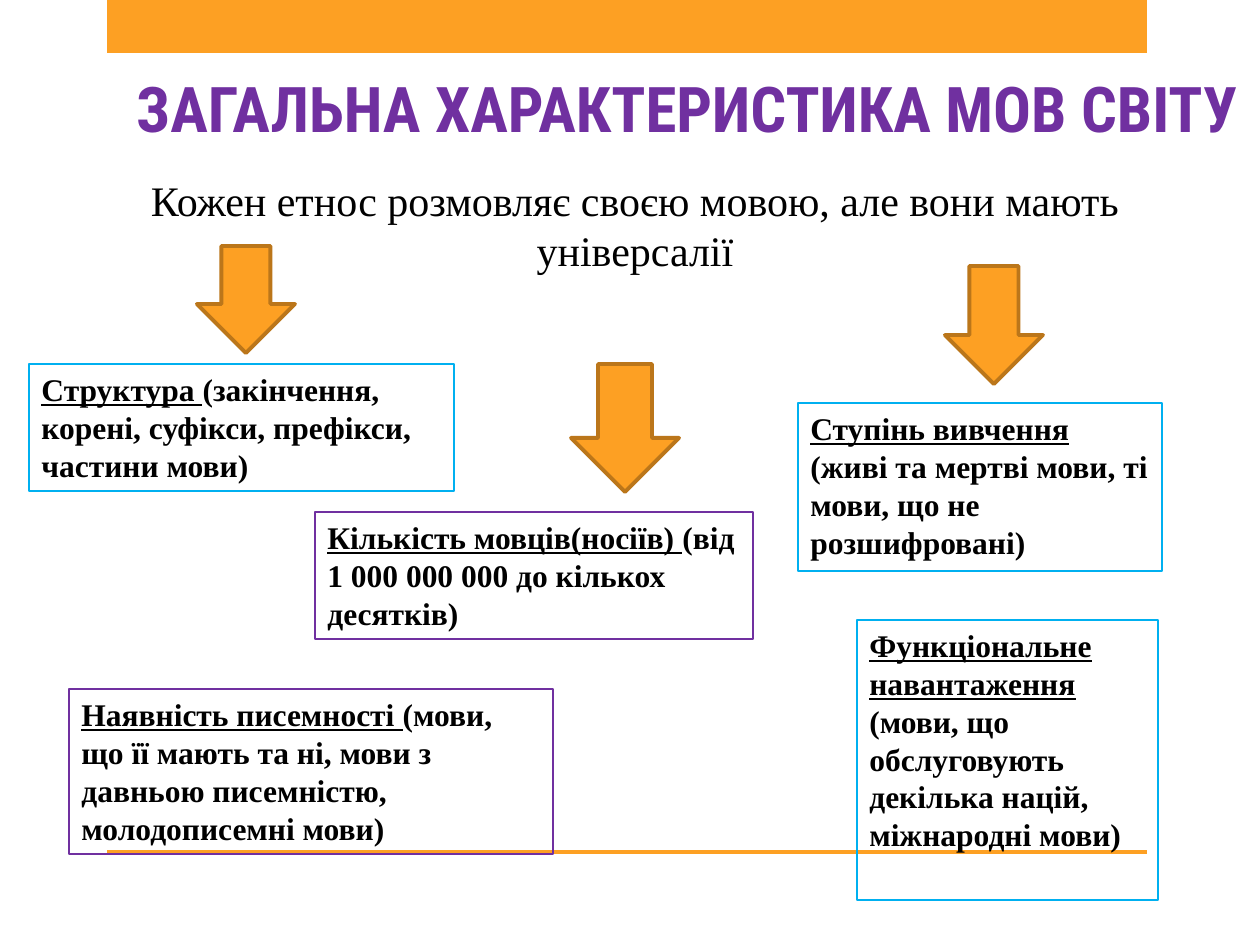
"""Build a slide on the general characteristics of the world's languages."""
from pptx import Presentation
from pptx.dml.color import RGBColor
from pptx.enum.shapes import MSO_SHAPE
from pptx.enum.text import MSO_ANCHOR, PP_ALIGN
from pptx.util import Emu, Pt

ORANGE = RGBColor(0xFD, 0xA0, 0x23)
BROWN = RGBColor(0xBB, 0x76, 0x1A)
PURPLE = RGBColor(0x70, 0x30, 0xA0)
BLUE = RGBColor(0x00, 0xB0, 0xF0)
BLACK = RGBColor(0x00, 0x00, 0x00)
SCALE = 914400 / 126


def px(*lengths):
    return [Emu(round(length * SCALE)) for length in lengths]


def add_text(text, place, size, heading="", font="Times New Roman", color=BLACK,
             bold=False, align=PP_ALIGN.LEFT, anchor=MSO_ANCHOR.TOP):
    box = page.shapes.add_textbox(*px(*place))
    frame = box.text_frame
    frame.word_wrap = True
    frame.vertical_anchor = anchor
    para = frame.paragraphs[0]
    para.alignment = align
    for words, underline in ((heading, True), (text, False)):
        if words:
            span = para.add_run()
            span.text = words
            span.font.name = font
            span.font.size = Pt(size)
            span.font.bold = bold
            span.font.underline = underline
            span.font.color.rgb = color
    return box


deck = Presentation()
deck.slide_width, deck.slide_height = px(1260, 945)
page = deck.slides.add_slide(deck.slide_layouts[6])

for top, height in ((0, 53), (850, 4)):
    band = page.shapes.add_shape(MSO_SHAPE.RECTANGLE, *px(107, top, 1040, height))
    band.shadow.inherit = False
    band.fill.solid()
    band.fill.fore_color.rgb = ORANGE
    band.line.fill.background()

title = add_text("ЗАГАЛЬНА ХАРАКТЕРИСТИКА МОВ СВІТУ", (39, 29, 1221, 122), 36,
                 font="Roboto Condensed", color=PURPLE, bold=True,
                 align=PP_ALIGN.CENTER, anchor=MSO_ANCHOR.BOTTOM)
title.text_frame.margin_left = px(88)[0]

add_text("Кожен етнос розмовляє своєю мовою, але вони мають універсалії",
         (59, 168, 1152, 115), 24, align=PP_ALIGN.CENTER)

features = [
    ("Кількість мовців(носіїв) ", "(від 1 000 000 000 до кількох десятків)",
     (315, 512, 438, 127), PURPLE),
    ("Наявність писемності ",
     "(мови, що її мають та ні, мови з давньою писемністю, молодописемні мови)",
     (69, 689, 484, 165), PURPLE),
    ("Структура ", "(закінчення, корені, суфікси, префікси, частини мови)",
     (29, 364, 425, 127), BLUE),
    ("Функціональне навантаження ",
     "(мови, що обслуговують декілька націй, міжнародні мови)",
     (857, 620, 301, 280), BLUE),
    ("Ступінь вивчення ", "(живі та мертві мови, ті мови, що не розшифровані)",
     (798, 403, 364, 168), BLUE),
]
for heading, text, place, color in features:
    box = add_text(text, place, 18, heading=heading, bold=True)
    box.line.color.rgb = color
    box.line.width = Pt(0.75)

for place in ((197, 246, 98, 107), (571, 364, 108, 128), (945, 266, 98, 118)):
    arrow = page.shapes.add_shape(MSO_SHAPE.DOWN_ARROW, *px(*place))
    arrow.shadow.inherit = False
    arrow.fill.solid()
    arrow.fill.fore_color.rgb = ORANGE
    arrow.line.color.rgb = BROWN
    arrow.line.width = Pt(2.25)

deck.save("out.pptx")
